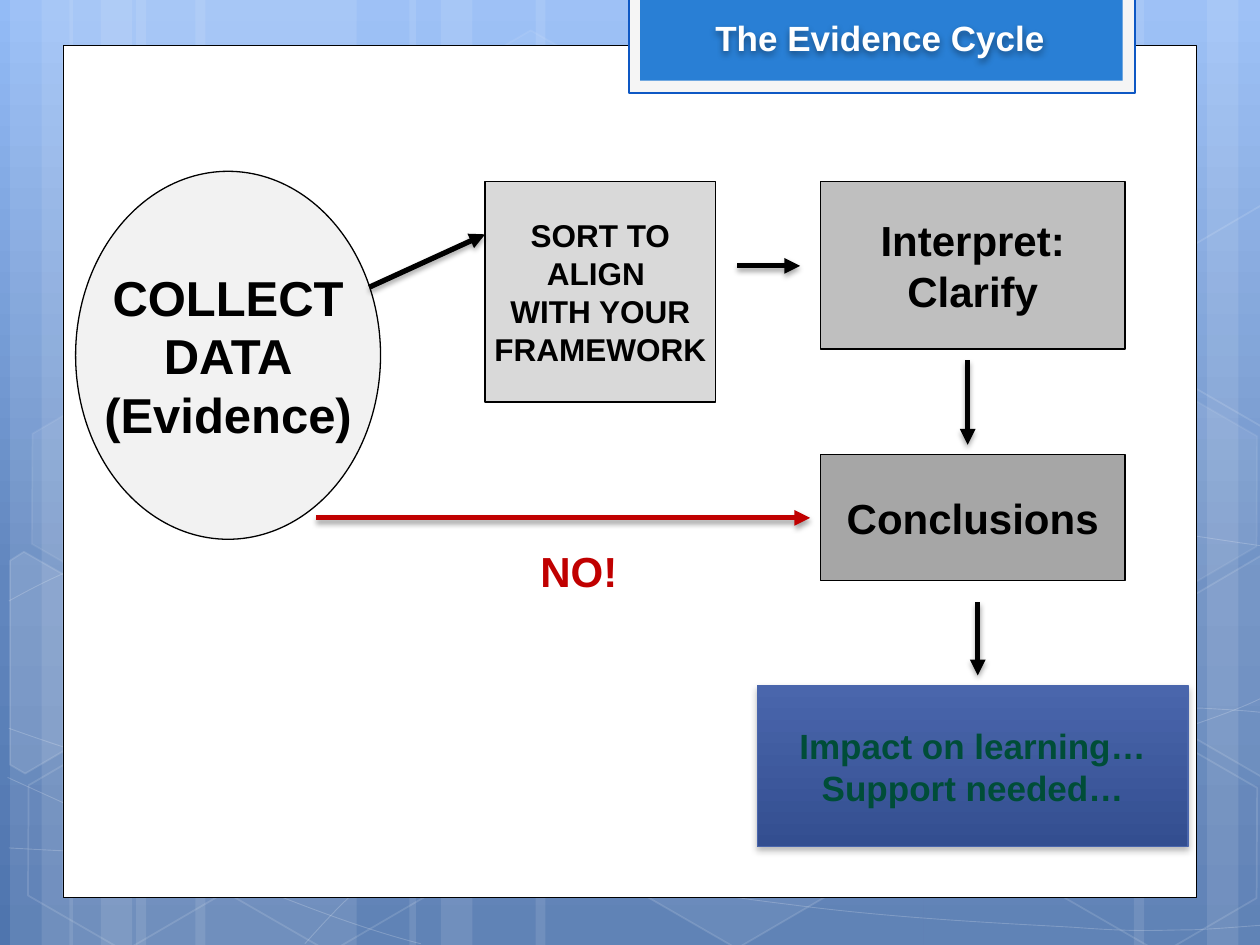
from copy import deepcopy
from dataclasses import dataclass
from typing import Optional

from lxml.etree import SubElement
from pptx import Presentation
from pptx.dml.color import RGBColor
from pptx.enum.shapes import MSO_CONNECTOR, MSO_SHAPE as Preset
from pptx.enum.text import MSO_ANCHOR, MSO_AUTO_SIZE, PP_ALIGN
from pptx.oxml.ns import qn
from pptx.util import Inches, Pt

WHITE = RGBColor(0xFF, 0xFF, 0xFF)
BLACK = RGBColor(0, 0, 0)
RED = RGBColor(0xC0, 0, 0)
GREEN = RGBColor(0, 0x4D, 0x38)
TAB_FRAME = RGBColor(0xF5, 0xF5, 0xF5)
TAB_EDGE = RGBColor(0x0E, 0x58, 0xC4)
TAB_BLUE = RGBColor(0x29, 0x7F, 0xD5)
IMPACT_TOP = RGBColor(0x4A, 0x66, 0xAC)
IMPACT_BOTTOM = RGBColor(0x33, 0x4E, 0x90)
GREYS = [RGBColor(level, level, level) for level in (0xF2, 0xD9, 0xBF, 0xA6)]
SKY = [(0, RGBColor(0x93, 0xBB, 0xF6)), (0.62, RGBColor(0x61, 0x86, 0xBE)),
       (1, RGBColor(0x4F, 0x75, 0xAE))]
FONT = "Arial"


@dataclass
class Step:
    box: tuple
    lines: list
    size: int
    fill: Optional[RGBColor]
    preset: Preset = Preset.RECTANGLE
    color: RGBColor = BLACK


@dataclass
class Arrow:
    start: tuple
    end: tuple
    color: RGBColor = BLACK


@dataclass
class Hexagon:
    left: float
    top: float
    fill_alpha: int
    line_alpha: int


@dataclass
class Outline:
    points: list
    fill_alpha: int


# Left and width of the full-height translucent bands
STRIPES = [(1.08, 1.75), (0.08, 0.5), (0.33, 0.83), (1.55, 1.75), (0.55, 0.5), (0.8, 0.83),
           (7.33, 1.75), (9.58, 0.5), (9, 0.83), (4.25, 3.08), (3.25, 0.5), (3.5, 0.83)]
# Cubic curves: a start, then two control points and an end for each piece
CURVES = [
    [(0.07, 6.73), (0.61, 6.76), (1.15, 6.79), (1.9, 6.78), (2.65, 6.77), (3.58, 6.75),
     (4.58, 6.65), (5.58, 6.55), (7, 6.36), (7.92, 6.17), (8.83, 5.98), (9.77, 5.68),
     (10.07, 5.51)],
    [(0.07, 4.77), (0.36, 4.61), (0.65, 4.46), (1.21, 4.31), (1.78, 4.16), (2.59, 3.94),
     (3.47, 3.87), (4.36, 3.8), (5.44, 3.79), (6.54, 3.87), (7.64, 3.95), (9.47, 4.26),
     (10.07, 4.34)],
    [(0.06, 6.17), (1.27, 6.72), (2.47, 7.27), (3.34, 7.49)],
    [(0.07, 5.78), (0.38, 5.89), (0.7, 6), (1.28, 6.16), (1.86, 6.31), (2.73, 6.56),
     (3.57, 6.73), (4.4, 6.9), (5.45, 7.08), (6.28, 7.18), (7.11, 7.29), (8, 7.33),
     (8.53, 7.36), (9.05, 7.4), (9.19, 7.38), (9.45, 7.38), (9.71, 7.37), (9.89, 7.35),
     (10.07, 7.34)],
    [(2.42, 7.49), (2.6, 7.29), (2.78, 7.09), (3.02, 6.91), (3.26, 6.73), (3.6, 6.53),
     (3.88, 6.39), (4.16, 6.25), (4.33, 6.19), (4.7, 6.09), (5.06, 5.99), (5.73, 5.85),
     (6.08, 5.78), (6.44, 5.71), (6.49, 5.71), (6.8, 5.69), (7.11, 5.66), (7.6, 5.63),
     (7.94, 5.62), (8.29, 5.61), (8.86, 5.62), (8.86, 5.62), (9.08, 5.62), (9.3, 5.62),
     (9.53, 5.62), (9.71, 5.63), (9.88, 5.64), (9.97, 5.65), (10.06, 5.66), (10.03, 5.65),
     (10.06, 5.66)],
]
HEXAGONS = [Hexagon(3.34, 0.36, 4, 8), Hexagon(4.97, 5.89, 6, 12), Hexagon(0.11, 5.91, 0, 12),
            Hexagon(0.14, 3.12, 7, 8), Hexagon(1.74, 5.92, 0, 12), Hexagon(7.53, 4.53, 10, 12),
            Hexagon(8.34, 5.93, 0, 12), Hexagon(8.34, 3.14, 7, 8)]
CUT_HEXAGONS = [
    Outline([(0.08, 4.45), (0.19, 4.38), (0.96, 4.82), (0.95, 5.7), (0.2, 6.14), (0.08, 6.07)], 10),
    Outline([(9.26, 4.85), (10.01, 4.41), (10.09, 4.46), (10.09, 6.13), (10.02, 6.17),
             (9.26, 5.73)], 4),
    Outline([(9.26, 2.07), (10.01, 1.63), (10.1, 1.68), (10.09, 3.35), (10.02, 3.39),
             (9.26, 2.95)], 0),
]
STEPS = [
    Step((0.6, 1.36, 2.42, 2.92), ["COLLECT\vDATA", "(Evidence)"], 28, GREYS[0], Preset.OVAL),
    Step((3.85, 1.44, 1.83, 1.75), ["SORT TO", "ALIGN ", "WITH YOUR", "FRAMEWORK"], 18, GREYS[1]),
    Step((6.51, 1.44, 2.42, 1.33), ["Interpret:", "Clarify"], 24, GREYS[2]),
    Step((6.51, 3.61, 2.42, 1), ["Conclusions"], 24, GREYS[3]),
    Step((6.01, 5.44, 3.42, 1.28), ["Impact on learning…", "Support needed…"], 20, None,
         color=GREEN),
]
ARROWS = [Arrow((2.93, 2.28), (3.85, 1.86)), Arrow((5.85, 2.11), (6.35, 2.11)),
          Arrow((7.68, 2.86), (7.68, 3.53)), Arrow((7.76, 4.78), (7.76, 5.36)),
          Arrow((2.51, 4.11), (6.43, 4.11), RED)]


def set_alpha(solid_fill, percent: int) -> None:
    SubElement(solid_fill[0], qn("a:alpha"), val=str(percent * 1000))


def add_shadow(shape, alpha: int, blur: float, distance: float) -> None:
    """Give the shape a downward black shadow."""
    properties = shape._element.spPr
    for effects in properties.findall(qn("a:effectLst")):
        properties.remove(effects)
    effects = SubElement(properties, qn("a:effectLst"))
    shadow = SubElement(effects, qn("a:outerShdw"), blurRad=str(Pt(blur)), dist=str(Pt(distance)),
                        dir="5400000", rotWithShape="0")
    SubElement(shadow, qn("a:srgbClr"), val=str(BLACK))
    set_alpha(shadow, alpha)


def set_gradient(fill, element, stops: list) -> None:
    """Fill from top to bottom; element is the XML that holds the fill."""
    fill.gradient()
    fill.gradient_angle = 270
    stop_list = element.find(".//" + qn("a:gsLst"))
    while len(stop_list) < len(stops):
        stop_list.append(deepcopy(stop_list[0]))
    for stop, (position, color) in zip(fill.gradient_stops, stops):
        stop.position = position
        stop.color.rgb = color


def style(shape, fill=None, line=None, width=1.0, fill_alpha=100, line_alpha=100) -> None:
    if fill is None or fill_alpha == 0:
        shape.fill.background()
    else:
        shape.fill.solid()
        shape.fill.fore_color.rgb = fill
        if fill_alpha < 100:
            set_alpha(shape._element.spPr.find(qn("a:solidFill")), fill_alpha)
    if line is None:
        shape.line.fill.background()
    else:
        shape.line.color.rgb = line
        shape.line.width = Pt(width)
        if line_alpha < 100:
            set_alpha(shape.line._ln.find(qn("a:solidFill")), line_alpha)
    shape.shadow.inherit = False


def add_box(slide, box: tuple, preset=Preset.RECTANGLE, **look):
    shape = slide.shapes.add_shape(preset, *map(Inches, box))
    style(shape, **look)
    return shape


def add_outline(slide, points: list, close: bool, **look):
    start, *others = [(Inches(x), Inches(y)) for x, y in points]
    builder = slide.shapes.build_freeform(*start)
    builder.add_line_segments(others, close=close)
    shape = builder.convert_to_shape()
    style(shape, **look)
    return shape


def add_curve(slide, points: list, **look) -> None:
    """Draw the points as an outline, then join each three segments into a cubic."""
    shape = add_outline(slide, points, False, **look)
    outline = shape._element.find(".//" + qn("a:path"))
    segments = outline.findall(qn("a:lnTo"))
    for first in range(0, len(segments), 3):
        cubic = SubElement(outline, qn("a:cubicBezTo"))
        for segment in segments[first:first + 3]:
            cubic.append(segment[0])
            outline.remove(segment)


def write_lines(shape, lines: list, size: int, color: RGBColor, anchor, wrap: bool) -> None:
    """Write centred bold paragraphs; a vertical tab breaks the line."""
    frame = shape.text_frame
    frame.word_wrap = wrap
    frame.vertical_anchor = anchor
    for index, line in enumerate(lines):
        paragraph = frame.add_paragraph() if index else frame.paragraphs[0]
        paragraph.alignment = PP_ALIGN.CENTER
        for part_index, part in enumerate(line.split("\v")):
            if part_index:
                paragraph.add_line_break()
            run = paragraph.add_run()
            run.text = part
            run.font.name, run.font.size, run.font.bold = FONT, Pt(size), True
            run.font.color.rgb = color


def add_step(slide, step: Step) -> None:
    line = IMPACT_TOP if step.fill is None else BLACK
    shape = add_box(slide, step.box, step.preset, fill=step.fill, line=line, width=0.75)
    if step.fill is None:
        set_gradient(shape.fill, shape._element.spPr, [(0, IMPACT_TOP), (1, IMPACT_BOTTOM)])
        add_shadow(shape, 28, 4, 2)
    write_lines(shape, step.lines, step.size, step.color, MSO_ANCHOR.MIDDLE, wrap=False)


def add_arrow(slide, arrow: Arrow) -> None:
    connector = slide.shapes.add_connector(MSO_CONNECTOR.STRAIGHT,
                                           *map(Inches, arrow.start + arrow.end))
    connector.line.color.rgb = arrow.color
    connector.line.width = Pt(3)
    SubElement(connector.line._ln, qn("a:tailEnd"), type="triangle")
    add_shadow(connector, 35, 3.1, 1.8)


def add_backdrop(slide) -> None:
    """Draw the decoration and hand it to the slide's layout."""
    set_gradient(slide.background.fill, slide._element, SKY)
    for left, width in STRIPES:
        add_box(slide, (left, 0, width, 7.5), fill=WHITE, fill_alpha=10)
    for curve in CURVES:
        add_curve(slide, curve, line=WHITE, width=0.5, line_alpha=20)
    for hexagon in HEXAGONS:
        shape = add_box(slide, (hexagon.left, hexagon.top, 1.75, 1.52), Preset.HEXAGON, fill=WHITE,
                        line=WHITE, fill_alpha=hexagon.fill_alpha, line_alpha=hexagon.line_alpha)
        shape.adjustments[0] = 0.285
        shape.rotation = 30
    for outline in CUT_HEXAGONS:
        add_outline(slide, outline.points, True, fill=WHITE, line=WHITE,
                    fill_alpha=outline.fill_alpha, line_alpha=12)
    add_box(slide, (0.5, 0.36, 9, 6.76), fill=WHITE, line=BLACK, width=0.5)
    add_box(slide, (4.99, -0.02, 4.02, 0.76), fill=TAB_FRAME, line=TAB_EDGE, width=1.25)
    add_box(slide, (5.08, -0.04, 3.83, 0.68), fill=TAB_BLUE)
    for shape in list(slide.shapes):
        if not shape.is_placeholder:
            slide.slide_layout.shapes._spTree.append(shape._element)


def place_title(slide, text: str) -> None:
    title = slide.shapes.title
    title.left, title.top, title.width, title.height = map(Inches, (5.18, 0.08, 3.61, 0.44))
    write_lines(title, [text], 20, WHITE, MSO_ANCHOR.TOP, wrap=True)
    title.text_frame.auto_size = MSO_AUTO_SIZE.SHAPE_TO_FIT_TEXT
    title.fill.background()
    add_shadow(title, 40, 4, 2)
    slide.shapes._spTree.append(title._element)


def main() -> None:
    presentation = Presentation()
    presentation.slide_width, presentation.slide_height = Inches(10), Inches(7.5)
    slide = presentation.slides.add_slide(presentation.slide_layouts[5])
    add_backdrop(slide)
    for step in STEPS:
        add_step(slide, step)
    for arrow in ARROWS:
        add_arrow(slide, arrow)
    warning = add_box(slide, (4.01, 4.28, 1.17, 0.51), fill=WHITE)
    write_lines(warning, ["NO!"], 24, RED, MSO_ANCHOR.TOP, wrap=True)
    place_title(slide, "The Evidence Cycle")
    presentation.save("out.pptx")


if __name__ == "__main__":
    main()
